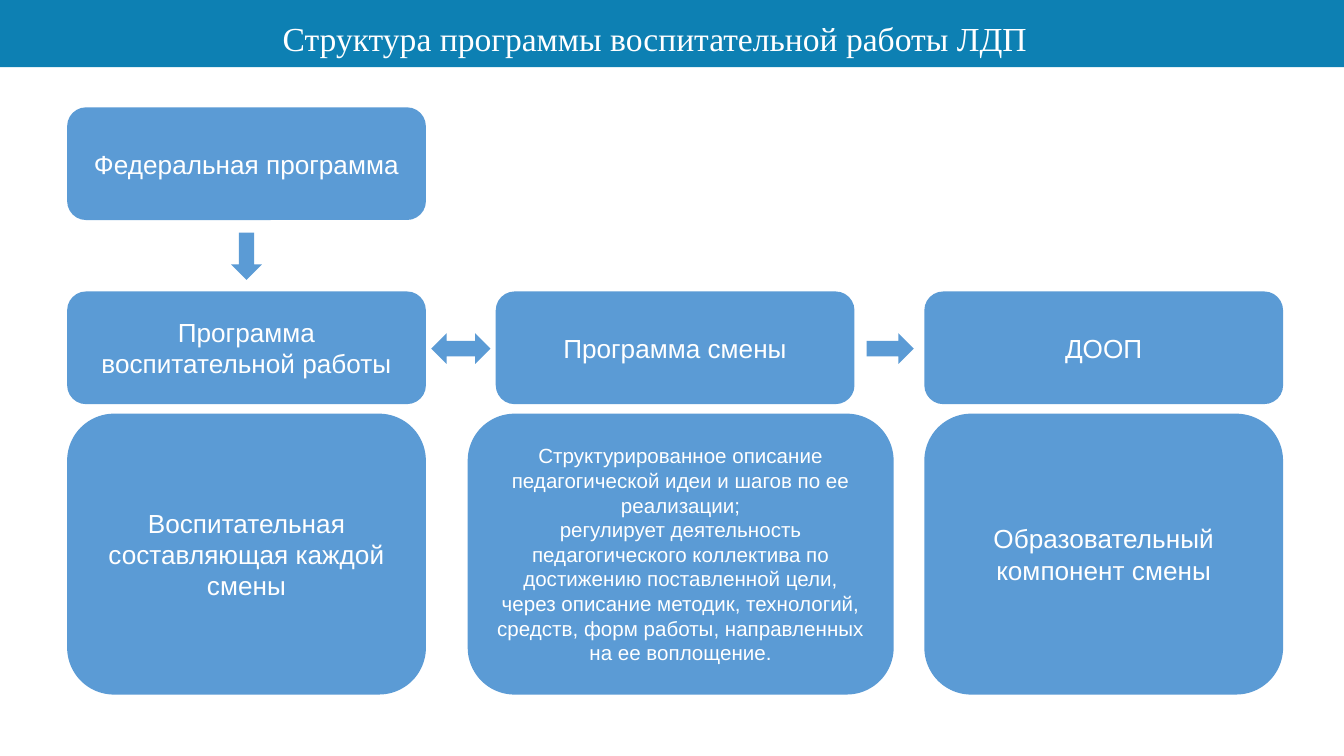
"""Build the slide on the structure of the camp education programme."""
import dataclasses

import pptx
import pptx.dml.color
import pptx.enum.shapes
import pptx.enum.text
import pptx.shapes.autoshape
import pptx.slide
import pptx.text.text
import pptx.util

Cm = pptx.util.Cm
Kind = pptx.enum.shapes.MSO_SHAPE


@dataclasses.dataclass(frozen=True)
class Theme:
    """Colours, fonts and type sizes."""
    bar: str = "0D80B3"
    box: str = "5B9BD5"
    ink: str = "FFFFFF"
    head: str = "Times New Roman"
    body: str = "Arial"
    big: int = 18
    mid: int = 14
    small: int = 11


@dataclasses.dataclass(frozen=True)
class Area:
    """Place and size in centimetres."""
    left: float
    top: float
    width: float
    height: float

    def spans(self) -> tuple[int, ...]:
        """Give the four lengths for the slide."""
        return tuple(Cm(n) for n in dataclasses.astuple(self))


@dataclasses.dataclass(frozen=True)
class Card:
    """A rounded box with its text."""
    area: Area
    lines: tuple[str, ...]
    size: int


@dataclasses.dataclass(frozen=True)
class Arrow:
    """A block arrow between boxes."""
    kind: Kind
    area: Area


THEME = Theme()
WIDE, HIGH = 25.4, 14.29
LEFT, STEP, SPAN = 1.27, 8.1, 6.78
FIRST, NEXT, LAST = 2.03, 5.51, 7.82
LOW, TALL = 2.13, 5.31


def cell(col: int, top: float, height: float) -> Area:
    """Give the area of a box in a column."""
    return Area(LEFT + col * STEP, top, SPAN, height)


CARDS = (
    Card(cell(0, FIRST, LOW), ("Федеральная программа",), THEME.mid),
    *(Card(cell(col, NEXT, LOW), (text,), THEME.mid) for col, text in enumerate(
        ("Программа воспитательной работы", "Программа смены", "ДООП"))),
    Card(cell(0, LAST, TALL), ("Воспитательная составляющая каждой смены",), THEME.mid),
    Card(Area(8.84, LAST, 8.05, TALL), (
        "Структурированное описание педагогической идеи и шагов по ее реализации;",
        "регулирует деятельность педагогического коллектива по достижению "
        "поставленной цели, через описание методик, технологий, средств, "
        "форм работы, направленных на ее воплощение."), THEME.small),
    Card(cell(2, LAST, TALL), ("Образовательный компонент смены",), THEME.mid),
)
ARROWS = (
    Arrow(Kind.DOWN_ARROW, Area(4.37, 4.4, 0.58, 0.89)),
    Arrow(Kind.LEFT_RIGHT_ARROW, Area(8.15, 6.3, 1.12, 0.58)),
    Arrow(Kind.RIGHT_ARROW, Area(16.38, 6.3, 0.89, 0.58)),
)


def paint(slide: pptx.slide.Slide, kind: Kind, area: Area,
          fill: str) -> pptx.shapes.autoshape.Shape:
    """Draw a plain filled shape."""
    shape = slide.shapes.add_shape(kind, *area.spans())
    shape.shadow.inherit = False
    shape.fill.solid()
    shape.fill.fore_color.rgb = pptx.dml.color.RGBColor.from_string(fill)
    shape.line.fill.background()
    return shape


def write(frame: pptx.text.text.TextFrame, lines: tuple[str, ...],
          face: str, size: int) -> None:
    """Fill a frame with centred lines."""
    frame.text = "\n".join(lines)
    frame.auto_size = pptx.enum.text.MSO_AUTO_SIZE.NONE
    frame.vertical_anchor = pptx.enum.text.MSO_ANCHOR.MIDDLE
    for para in frame.paragraphs:
        para.alignment = pptx.enum.text.PP_ALIGN.CENTER
        para.font.name = face
        para.font.size = pptx.util.Pt(size)
        para.font.color.rgb = pptx.dml.color.RGBColor.from_string(THEME.ink)


def place(slide: pptx.slide.Slide, area: Area) -> None:
    """Set the title above the bar."""
    title = slide.shapes.title
    title.left, title.top, title.width, title.height = area.spans()
    write(title.text_frame, ("Структура программы воспитательной работы ЛДП",),
          THEME.head, THEME.big)
    title.text_frame.word_wrap = False
    title.element.getparent().append(title.element)


def main() -> None:
    """Build and save the deck."""
    deck = pptx.Presentation()
    deck.slide_width, deck.slide_height = Cm(WIDE), Cm(HIGH)
    slide = deck.slides.add_slide(deck.slide_layouts.get_by_name("Title Only"))
    paint(slide, Kind.RECTANGLE, Area(0, 0, WIDE, 1.27), THEME.bar)
    for card in CARDS:
        shape = paint(slide, Kind.ROUNDED_RECTANGLE, card.area, THEME.box)
        write(shape.text_frame, card.lines, THEME.body, card.size)
        shape.text_frame.word_wrap = True
    for arrow in ARROWS:
        paint(slide, arrow.kind, arrow.area, THEME.box)
    place(slide, Area(5, 0.2, 14.76, 1.02))
    deck.save("out.pptx")


if __name__ == "__main__":
    main()
